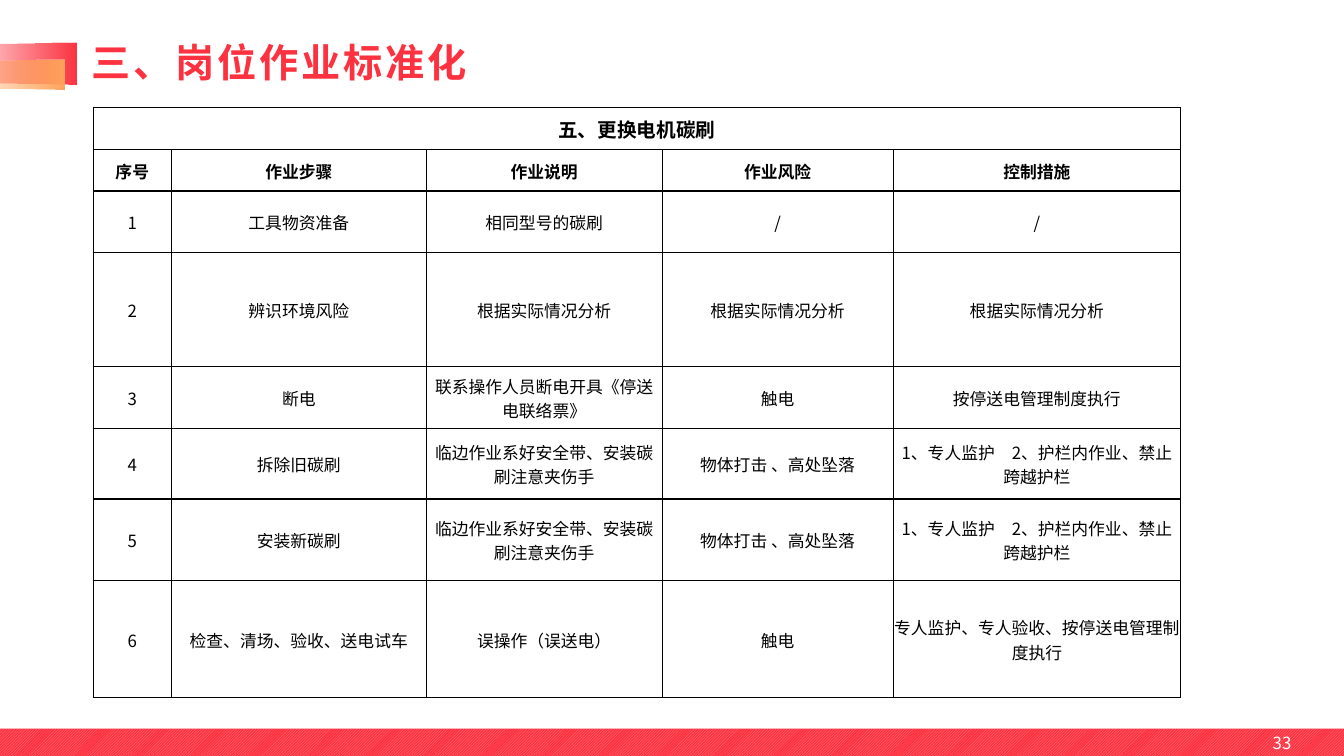
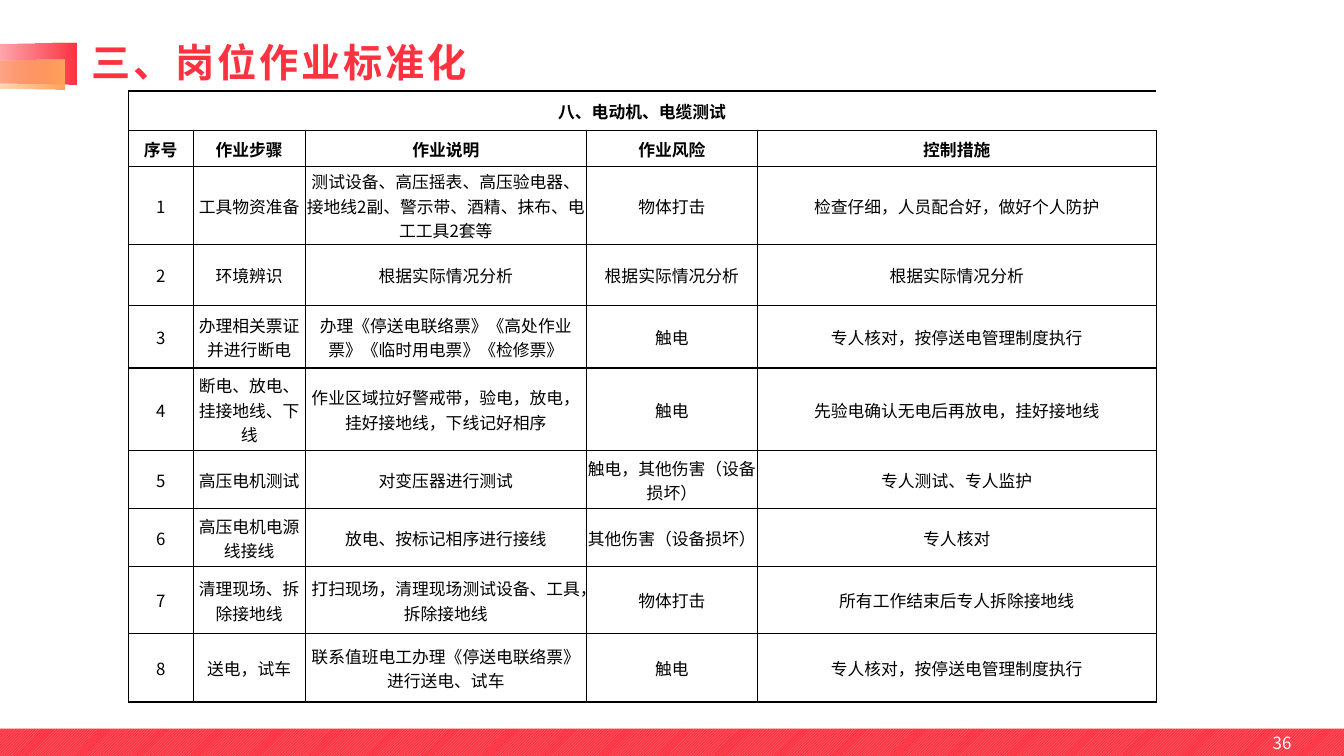
from dataclasses import dataclass

from pptx import Presentation
from pptx.dml.color import RGBColor
from pptx.enum.dml import MSO_PATTERN
from pptx.enum.lang import MSO_LANGUAGE_ID as Language
from pptx.enum.shapes import MSO_SHAPE as Preset
from pptx.enum.text import MSO_ANCHOR as Anchor, PP_ALIGN as Align
from pptx.oxml.ns import qn
from pptx.oxml.xmlchemy import OxmlElement
from pptx.slide import Slide
from pptx.util import Pt


@dataclass(frozen=True)
class Theme:
    red: str = "FC3240"
    pale_red: str = "FD848C"
    orange: str = "FFA45D"
    white: str = "FFFFFF"
    black: str = "000000"
    title_font: str = "Noto Sans CJK JP"
    table_font: str = "Noto Sans CJK SC"
    title_size: float = 28
    large_heading_size: float = 14
    text_size: float = 12
    title_spacing: float = 2
    border_width: float = 1


THEME = Theme()
SLIDE_WIDTH, SLIDE_HEIGHT = 960, 540
TITLE = "三、岗位作业标准化"
HEADER = ("序号", "作业步骤", "作业说明", "作业风险", "控制措施")


@dataclass(frozen=True)
class Box:
    left: float
    top: float
    width: float
    height: float

    def lengths(self) -> tuple[Pt, Pt, Pt, Pt]:
        return Pt(self.left), Pt(self.top), Pt(self.width), Pt(self.height)


@dataclass(frozen=True)
class Ribbon:
    box: Box
    color: str


@dataclass(frozen=True)
class TextStyle:
    font: str
    size: float
    color: str
    bold: bool = False
    align: Align = Align.LEFT
    spacing: float = 0
    line_spacing: float = 1.0


@dataclass(frozen=True)
class Procedure:
    page: int
    heading: str
    heading_size: float
    left: float
    top: float
    columns: tuple[float, ...]
    row_heights: tuple[float, ...]
    steps: tuple[tuple[str, str, str, str], ...]
    heading_right_border: bool = True


RIBBONS = (
    Ribbon(Box(-8.6, -2.9, 29.5, 96.5), THEME.red),
    Ribbon(Box(-6.5, 11.5, 21, 83.5), THEME.orange),
)
TITLE_BOX = Box(58.5, 27.5, 573, 37.5)
FOOTER_BOX = Box(-0.5, 520.5, 960.5, 20)
PAGE_BOX = Box(713.5, 516, 216, 29)

TITLE_STYLE = TextStyle(THEME.title_font, THEME.title_size, THEME.red, bold=True,
                        spacing=THEME.title_spacing, line_spacing=0.9)
PAGE_STYLE = TextStyle(THEME.title_font, THEME.text_size, THEME.white, align=Align.RIGHT)

ANALYSE = "根据实际情况分析"
BRUSH_NOTE = "临边作业系好安全带、安装碳刷注意夹伤手"
BRUSH_RISK = "物体打击 、高处坠落"
BRUSH_CONTROL = "1、专人监护　2、护栏内作业、禁止跨越护栏"
CHECKED_POWER = "专人核对，按停送电管理制度执行"

PROCEDURES = (
    Procedure(
        page=33,
        heading="五、更换电机碳刷",
        heading_size=THEME.large_heading_size,
        left=66.5,
        top=77,
        columns=(56, 182, 168.5, 165, 205.5),
        row_heights=(30, 29.5, 44, 81.5, 44, 50.5, 58.5, 83.5),
        steps=(
            ("工具物资准备", "相同型号的碳刷", "/", "/"),
            ("辨识环境风险", ANALYSE, ANALYSE, ANALYSE),
            ("断电", "联系操作人员断电开具《停送电联络票》", "触电", "按停送电管理制度执行"),
            ("拆除旧碳刷", BRUSH_NOTE, BRUSH_RISK, BRUSH_CONTROL),
            ("安装新碳刷", BRUSH_NOTE, BRUSH_RISK, BRUSH_CONTROL),
            ("检查、清场、验收、送电试车", "误操作（误送电）", "触电",
             "专人监护、专人验收、按停送电管理制度执行"),
        ),
    ),
    Procedure(
        page=36,
        heading="八、电动机、电缆测试",
        heading_size=THEME.text_size,
        left=91.5,
        top=65,
        columns=(46.5, 80, 201, 122, 285),
        row_heights=(28, 26, 55.5, 43.5, 45, 59, 41.5, 41.5, 47.5, 49),
        heading_right_border=False,
        steps=(
            ("工具物资准备",
             "测试设备、高压摇表、高压验电器、接地线2副、警示带、酒精、抹布、电工工具2套等",
             "物体打击", "检查仔细，人员配合好，做好个人防护"),
            ("环境辨识", ANALYSE, ANALYSE, ANALYSE),
            ("办理相关票证并进行断电", "办理《停送电联络票》《高处作业票》《临时用电票》《检修票》",
             "触电", CHECKED_POWER),
            ("断电、放电、挂接地线、下线",
             "作业区域拉好警戒带，验电，放电，挂好接地线，下线记好相序",
             "触电", "先验电确认无电后再放电，挂好接地线"),
            ("高压电机测试", "对变压器进行测试", "触电，其他伤害（设备损坏）", "专人测试、专人监护"),
            ("高压电机电源线接线", "放电、按标记相序进行接线", "其他伤害（设备损坏）", "专人核对"),
            ("清理现场、拆除接地线", "打扫现场，清理现场测试设备、工具，拆除接地线",
             "物体打击", "所有工作结束后专人拆除接地线"),
            ("送电，试车", "联系值班电工办理《停送电联络票》进行送电、试车", "触电", CHECKED_POWER),
        ),
    ),
)


def rgb(color: str) -> RGBColor:
    return RGBColor.from_string(color)


def write_text(text_frame, text: str, style: TextStyle) -> None:
    paragraph = text_frame.paragraphs[0]
    paragraph.text = text
    paragraph.alignment = style.align
    paragraph.line_spacing = style.line_spacing
    font = paragraph.font
    font.name = style.font
    font.size = Pt(style.size)
    font.bold = style.bold
    font.color.rgb = rgb(style.color)
    font.language_id = Language.SIMPLIFIED_CHINESE
    properties = paragraph._p.pPr.find(qn("a:defRPr"))
    if style.spacing:
        properties.set("spc", str(round(style.spacing * 100)))
    east_asian = OxmlElement("a:ea")
    east_asian.set("typeface", style.font)
    properties.find(qn("a:latin")).addnext(east_asian)


def add_text(slide: Slide, box: Box, text: str, style: TextStyle) -> None:
    text_frame = slide.shapes.add_textbox(*box.lengths()).text_frame
    text_frame.word_wrap = True
    text_frame.vertical_anchor = Anchor.MIDDLE
    write_text(text_frame, text, style)


def add_plain_shape(slide: Slide, preset: Preset, box: Box):
    shape = slide.shapes.add_shape(preset, *box.lengths())
    shape.shadow.inherit = False
    shape.line.fill.background()
    return shape


def add_ribbon(slide: Slide, ribbon: Ribbon) -> None:
    """Draw a tapered band that fades out towards the left edge."""
    shape = add_plain_shape(slide, Preset.TRAPEZOID, ribbon.box)
    shape.adjustments[0] = 0.07
    shape.rotation = 270
    shape.fill.gradient()
    shape.fill.gradient_angle = 270
    for stop in shape.fill.gradient_stops:
        stop.color.rgb = rgb(ribbon.color)
    alpha = OxmlElement("a:alpha")
    alpha.set("val", "0")
    next(shape._element.spPr.iter(qn("a:srgbClr"))).append(alpha)


def add_frame(slide: Slide, page: int) -> None:
    """Draw the ribbons, title, footer band and page number."""
    for ribbon in RIBBONS:
        add_ribbon(slide, ribbon)
    footer = add_plain_shape(slide, Preset.RECTANGLE, FOOTER_BOX)
    footer.fill.patterned()
    footer.fill.pattern = MSO_PATTERN.DARK_UPWARD_DIAGONAL
    footer.fill.fore_color.rgb = rgb(THEME.pale_red)
    footer.fill.back_color.rgb = rgb(THEME.red)
    add_text(slide, TITLE_BOX, TITLE, TITLE_STYLE)
    add_text(slide, PAGE_BOX, str(page), PAGE_STYLE)


def set_borders(cell, hidden: str = "") -> None:
    """Rule all sides of a cell except those whose letters are in hidden."""
    properties = cell._tc.get_or_add_tcPr()
    for side in "LRTB":
        line = OxmlElement(f"a:ln{side}")
        line.set("w", str(Pt(THEME.border_width)))
        if side in hidden:
            line.append(OxmlElement("a:noFill"))
        else:
            fill, color = OxmlElement("a:solidFill"), OxmlElement("a:srgbClr")
            color.set("val", THEME.black)
            fill.append(color)
            line.append(fill)
        properties.append(line)


def add_procedure_table(slide: Slide, procedure: Procedure) -> None:
    numbered = [(str(number), *step) for number, step in enumerate(procedure.steps, 1)]
    rows = [(procedure.heading,) + ("",) * (len(HEADER) - 1), HEADER, *numbered]
    box = Box(procedure.left, procedure.top,
              sum(procedure.columns), sum(procedure.row_heights))
    table = slide.shapes.add_table(len(rows), len(HEADER), *box.lengths()).table
    table.first_row = False
    table.horz_banding = False
    for column, width in zip(table.columns, procedure.columns):
        column.width = Pt(width)
    for row, height in zip(table.rows, procedure.row_heights):
        row.height = Pt(height)
    table.cell(0, 0).merge(table.cell(0, len(HEADER) - 1))

    for row_index, texts in enumerate(rows):
        is_heading = row_index == 0
        hidden = "R" if is_heading and not procedure.heading_right_border else ""
        size = procedure.heading_size if is_heading else THEME.text_size
        style = TextStyle(THEME.table_font, size, THEME.black,
                          bold=row_index < 2, align=Align.CENTER)
        for column_index, text in enumerate(texts):
            cell = table.cell(row_index, column_index)
            cell.margin_left = cell.margin_right = cell.margin_top = Pt(0.7)
            cell.margin_bottom = Pt(0)
            cell.vertical_anchor = Anchor.MIDDLE
            set_borders(cell, hidden)
            cell.fill.solid()
            cell.fill.fore_color.rgb = rgb(THEME.white)
            if text:
                write_text(cell.text_frame, text, style)


def main() -> None:
    presentation = Presentation()
    presentation.slide_width = Pt(SLIDE_WIDTH)
    presentation.slide_height = Pt(SLIDE_HEIGHT)
    blank_layout = presentation.slide_layouts[6]
    for procedure in PROCEDURES:
        slide = presentation.slides.add_slide(blank_layout)
        add_frame(slide, procedure.page)
        add_procedure_table(slide, procedure)
    presentation.save("out.pptx")


if __name__ == "__main__":
    main()
